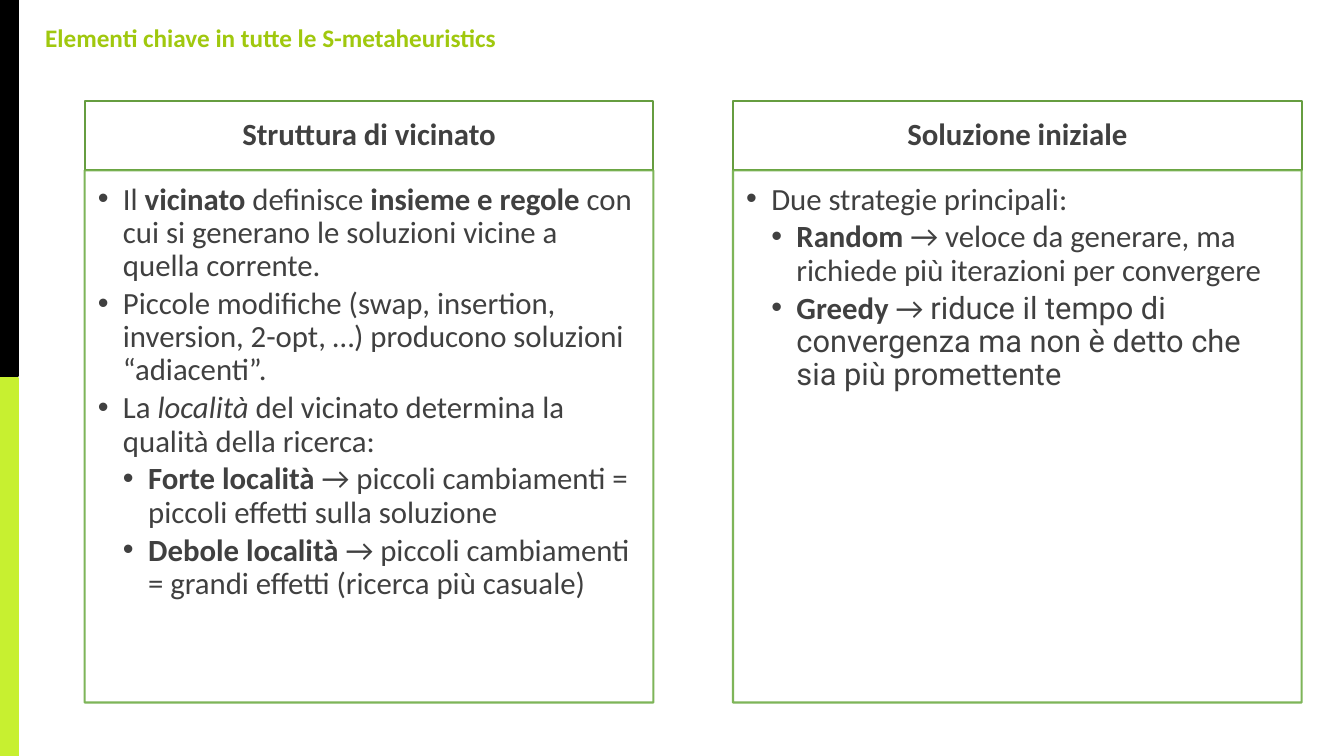
from lxml.etree import SubElement
from pptx import Presentation
from pptx.dml.color import RGBColor
from pptx.enum.shapes import MSO_SHAPE
from pptx.enum.text import MSO_ANCHOR, MSO_AUTO_SIZE, PP_ALIGN
from pptx.oxml.ns import qn
from pptx.util import Inches, Pt

TITLE = "Elementi chiave in tutte le S-metaheuristics"
PANELS = [
    ("Struttura di vicinato", [
        (1, [("Il ", ""), ("vicinato", "b"), (" definisce ", ""), ("insieme e regole", "b"),
             (" con cui si generano le soluzioni vicine a quella corrente.", "")]),
        (1, [("Piccole modifiche (swap, insertion, inversion, 2-opt, …) "
              "producono soluzioni “adiacenti”.", "")]),
        (1, [("La ", ""), ("località", "i"),
             (" del vicinato determina la qualità della ricerca:", "")]),
        (2, [("Forte località", "b"),
             (" → piccoli cambiamenti = piccoli effetti sulla soluzione", "")]),
        (2, [("Debole località", "b"),
             (" → piccoli cambiamenti = grandi effetti (ricerca più casuale)", "")]),
    ]),
    ("Soluzione iniziale", [
        (1, [("Due strategie principali:", "")]),
        (2, [("Random", "b"),
             (" → veloce da generare, ma richiede più iterazioni per convergere", "")]),
        (2, [("Greedy", "b"), (" → ", ""),
             ("riduce il tempo di convergenza ma non è detto che sia più promettente", "r")]),
    ]),
]
COLORS = {"title": "A0C80E", "lime": "C7F030", "black": "000000", "white": "FFFFFF",
          "head": "669D40", "body": "70AD47", "text": "404040"}
LEFT, TOP, WIDTH, STEP = 0.84, 1, 5.64, 6.43
HEAD, BODY = 0.69, 5.28
STRIPES = [("lime", 3.75, 3.77), ("black", 0, 3.73)]


def tint(name):
    return RGBColor.from_string(COLORS[name])


def fade(fill):
    color = fill._xPr.find(qn("a:solidFill"))[0]
    SubElement(color, qn("a:alpha"), val="90000")


def box(slide, place, fill, line, clear=False):
    shape = slide.shapes.add_shape(MSO_SHAPE.RECTANGLE, *map(Inches, place))
    shape.shadow.inherit = False
    shape.fill.solid()
    shape.fill.fore_color.rgb = tint(fill)
    shape.line.width = Pt(1.5)
    shape.line.color.rgb = tint(line)
    if clear:
        fade(shape.fill)
        fade(shape.line.fill)
    return shape


def write(shape, paras, size=22, color="text", align=PP_ALIGN.LEFT, anchor=MSO_ANCHOR.TOP,
          insets=(0.1, 0.05, 0.1, 0.05), space=None, after=0):
    frame = shape.text_frame
    frame.word_wrap = True
    frame.vertical_anchor = anchor
    (frame.margin_left, frame.margin_top,
     frame.margin_right, frame.margin_bottom) = map(Inches, insets)
    for num, (level, runs) in enumerate(paras):
        para = frame.add_paragraph() if num else frame.paragraphs[0]
        para.alignment = align
        para.line_spacing = space
        para.space_after = Pt(after)
        if level:
            para.level = level
            props = para._p.get_or_add_pPr()
            props.set("marL", str(Inches(0.25 * level)))
            props.set("indent", str(Inches(-0.25)))
            SubElement(props, qn("a:buFont"), typeface="Arial")
            SubElement(props, qn("a:buChar"), char="•")
        for text, style in runs:
            run = para.add_run()
            run.text = text
            font = run.font
            font.size = Pt(size)
            font.name = "Roboto" if style == "r" else "Calibri"
            font.bold = style == "b"
            font.italic = style == "i"
            font.color.rgb = tint(color)


def main():
    """Build the slide with its title, side stripes and two panels."""
    deck = Presentation()
    deck.slide_width, deck.slide_height = Inches(13.33), Inches(7.5)
    slide = deck.slides.add_slide(deck.slide_layouts[6])
    title = slide.shapes.add_textbox(*map(Inches, (0.35, 0.17, 8.66, 0.4)))
    write(title, [(0, [(TITLE, "b")])], size=18, color="title")
    title.text_frame.auto_size = MSO_AUTO_SIZE.SHAPE_TO_FIT_TEXT
    for color, top, height in STRIPES:
        box(slide, (0, top, 0.18, height), color, color)
    for num, (name, points) in enumerate(PANELS):
        left = LEFT + num * STEP
        head = box(slide, (left, TOP, WIDTH, HEAD), "white", "head")
        write(head, [(0, [(name, "b")])], align=PP_ALIGN.CENTER, anchor=MSO_ANCHOR.MIDDLE,
              insets=(0.17, 0.1, 0.17, 0.1), space=0.9)
        body = box(slide, (left, TOP + HEAD, WIDTH, BODY), "white", "body", clear=True)
        write(body, points, insets=(0.13, 0.13, 0.17, 0.19), space=0.9, after=3.3)
    deck.save("out.pptx")


if __name__ == "__main__":
    main()
